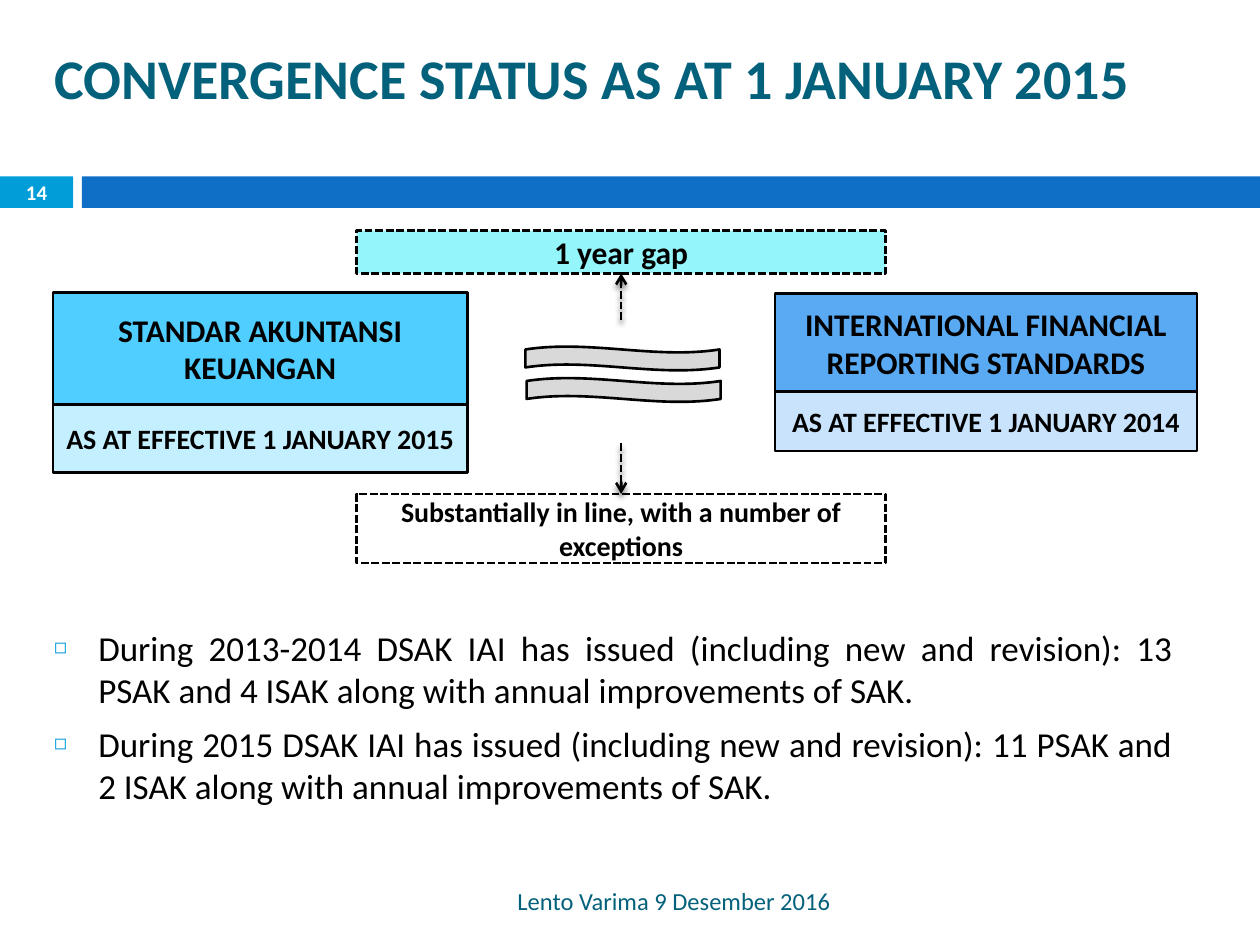
from lxml import etree
from pptx import Presentation
from pptx.dml.color import RGBColor
from pptx.enum.dml import MSO_LINE as Dash
from pptx.enum.shapes import MSO_CONNECTOR as Link, MSO_SHAPE as Kind
from pptx.enum.text import MSO_ANCHOR as Anchor, MSO_AUTO_SIZE as Fit, PP_ALIGN as Align
from pptx.oxml import parse_xml
from pptx.oxml.ns import nsdecls, qn
from pptx.util import Inches, Pt


def write(shape, lines, size, color, bold=False, align=Align.CENTER, anchor=Anchor.MIDDLE):
    """Fill a shape with one paragraph per line, all in one style."""
    frame = shape.text_frame
    frame.text = "\n".join(lines)
    frame.word_wrap = True
    frame.auto_size = Fit.NONE
    frame.vertical_anchor = anchor
    for para in frame.paragraphs:
        para.alignment = align
        for run in para.runs:
            font = run.font
            font.name, font.size, font.bold = "Calibri", Pt(size), bold
            font.color.rgb = RGBColor.from_string(color)


def draw(kind, box, fill, edge=True):
    shape = slide.shapes.add_shape(kind, *map(Inches, box))
    shape.shadow.inherit = False
    shape.fill.solid()
    shape.fill.fore_color.rgb = RGBColor.from_string(fill)
    if edge:
        shape.line.color.rgb = RGBColor.from_string("000000")
        shape.line.width = Pt(1.5)
    else:
        shape.line.fill.background()
    return shape


prs = Presentation()
prs.slide_width, prs.slide_height = Inches(10), Inches(7.5)
slide = prs.slides.add_slide(prs.slide_layouts[1])

# Title and header band
title = slide.shapes.title
title.left, title.top, title.width, title.height = map(Inches, (0.33, 0.33, 9.67, 0.57))
write(title, ["CONVERGENCE STATUS AS AT 1 JANUARY 2015"], 32, "04617B", True, Align.LEFT)
draw(Kind.RECTANGLE, (0, 1.4, 0.58, 0.25), "009DD9", False)
draw(Kind.RECTANGLE, (0.65, 1.4, 9.35, 0.25), "0F6FC6", False)

# Page number and footer
page = slide.shapes.add_textbox(*map(Inches, (0, 1.39, 0.58, 0.27)))
write(page, ["14"], 11.9, "FFFFFF", True)
footer = slide.shapes.add_textbox(*map(Inches, (3.31, 6.95, 3.38, 0.4)))
write(footer, ["Lento Varima 9 Desember 2016"], 14, "04617B", align=Align.RIGHT)

# Bulleted list
body = slide.placeholders[1]
body.left, body.top, body.width, body.height = map(Inches, (0.33, 4.92, 9.08, 1.78))
write(body, [
    "During 2013-2014 DSAK IAI has issued (including new and revision): "
    "13 PSAK and 4 ISAK along with annual improvements of SAK.",
    "During 2015 DSAK IAI has issued (including new and revision): "
    "11 PSAK and 2 ISAK along with annual improvements of SAK.",
], 20, "000000", align=Align.JUSTIFY, anchor=Anchor.TOP)
for para in body.text_frame.paragraphs:
    para.space_before = Pt(7)
    props = para._p.get_or_add_pPr()
    props.set("marL", str(Inches(0.35)))
    props.set("indent", str(-Inches(0.35)))
    color = etree.SubElement(props, qn("a:buClr"))
    etree.SubElement(color, qn("a:srgbClr"), val="009DD9")
    etree.SubElement(props, qn("a:buSzPct"), val="60000")
    etree.SubElement(props, qn("a:buChar"), char="◻")

# The two sets of standards: name above, date below
sets = [
    (0.42, 2.32, 3.29, 0.89, 0.54, "4FCEFF", "C4EFFF", "STANDAR AKUNTANSI KEUANGAN", 2015),
    (6.15, 2.33, 3.35, 0.78, 0.47, "59AAF2", "C8E3FB",
     "INTERNATIONAL FINANCIAL REPORTING STANDARDS", 2014),
]
for left, top, width, high, low, dark, light, name, year in sets:
    head = draw(Kind.RECTANGLE, (left, top, width, high), dark)
    write(head, [name], 18, "000000", True)
    date = draw(Kind.RECTANGLE, (left, top + high, width, low), light)
    write(date, [f"AS AT EFFECTIVE 1 JANUARY {year}"], 16, "000000", True)
    date.text_frame.margin_left = date.text_frame.margin_right = Inches(0.05)

# Wavy "about equal" sign
for left, top in ((4.17, 2.75), (4.18, 3)):
    draw(Kind.WAVE, (left, top, 1.54, 0.19), "D9D9D9")

# Dashed notes, each with an arrow: top, height, fill, size, text, arrow start, side
notes = [
    (3.92, 0.55, "FFFFFF", 16, "Substantially in line, with a number of exceptions", 3.52, 0),
    (1.83, 0.34, "94F5FA", 18, "1 year gap", 2.54, 2),
]
for top, height, fill, size, text, start, side in notes:
    note = draw(Kind.RECTANGLE, (2.83, top, 4.2, height), fill)
    note.line.dash_style = Dash.SQUARE_DOT
    write(note, [text], size, "000000", True)
    arrow = slide.shapes.add_connector(
        Link.STRAIGHT, Inches(4.93), Inches(start), Inches(4.93), Inches(top))
    arrow.end_connect(note, side)
    arrow.line.color.rgb = RGBColor.from_string("000000")
    arrow.line.width = Pt(1.5)
    arrow.line.dash_style = Dash.SQUARE_DOT
    etree.SubElement(arrow.line._get_or_add_ln(), qn("a:tailEnd"), type="arrow")
    arrow._element.spPr.append(parse_xml(
        f'<a:effectLst {nsdecls("a")}>'
        f'<a:outerShdw blurRad="{Pt(3)}" dist="{Pt(2.4)}" dir="5400000" rotWithShape="0">'
        '<a:srgbClr val="000000"><a:alpha val="45000"/></a:srgbClr>'
        '</a:outerShdw></a:effectLst>'))

prs.save("out.pptx")
